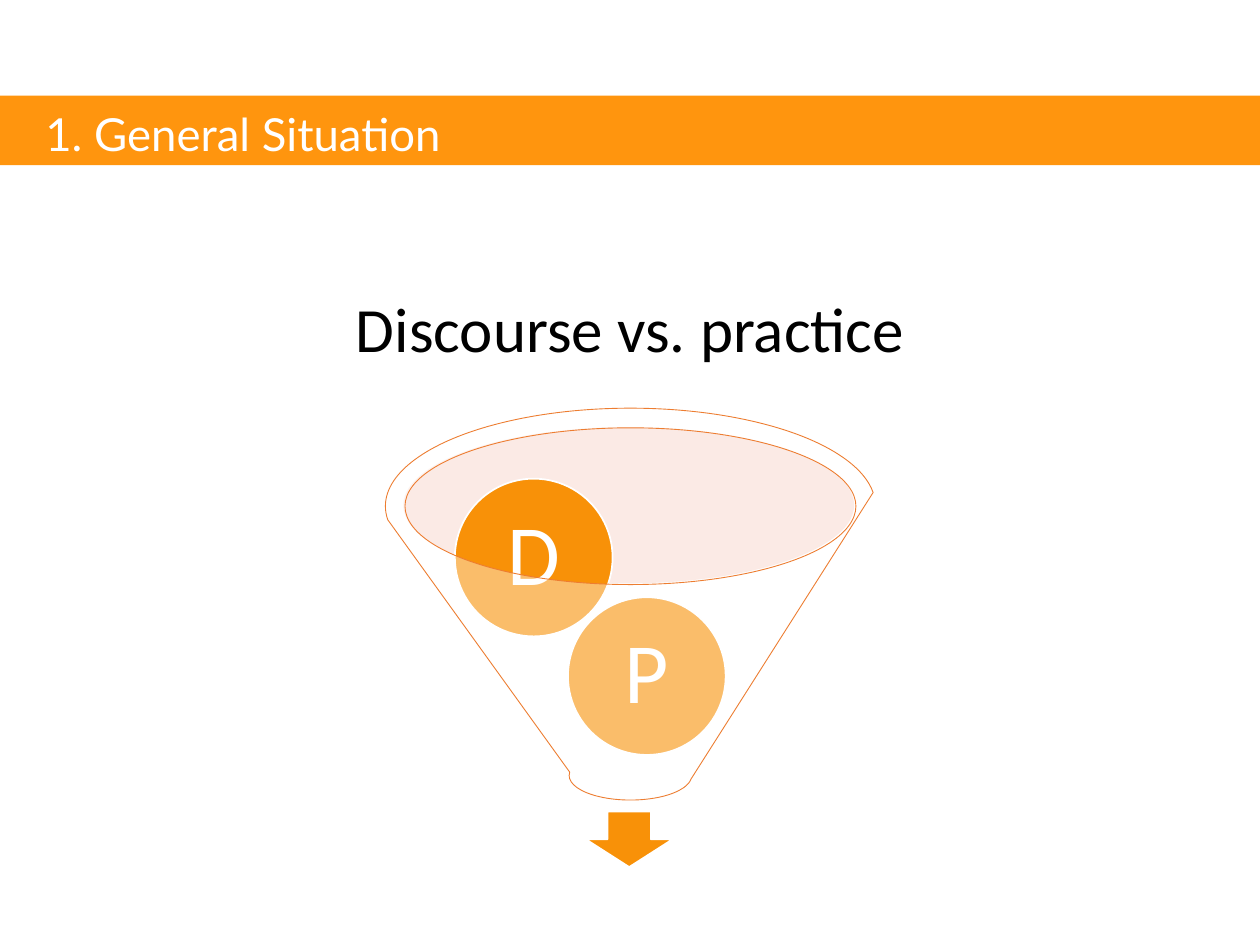
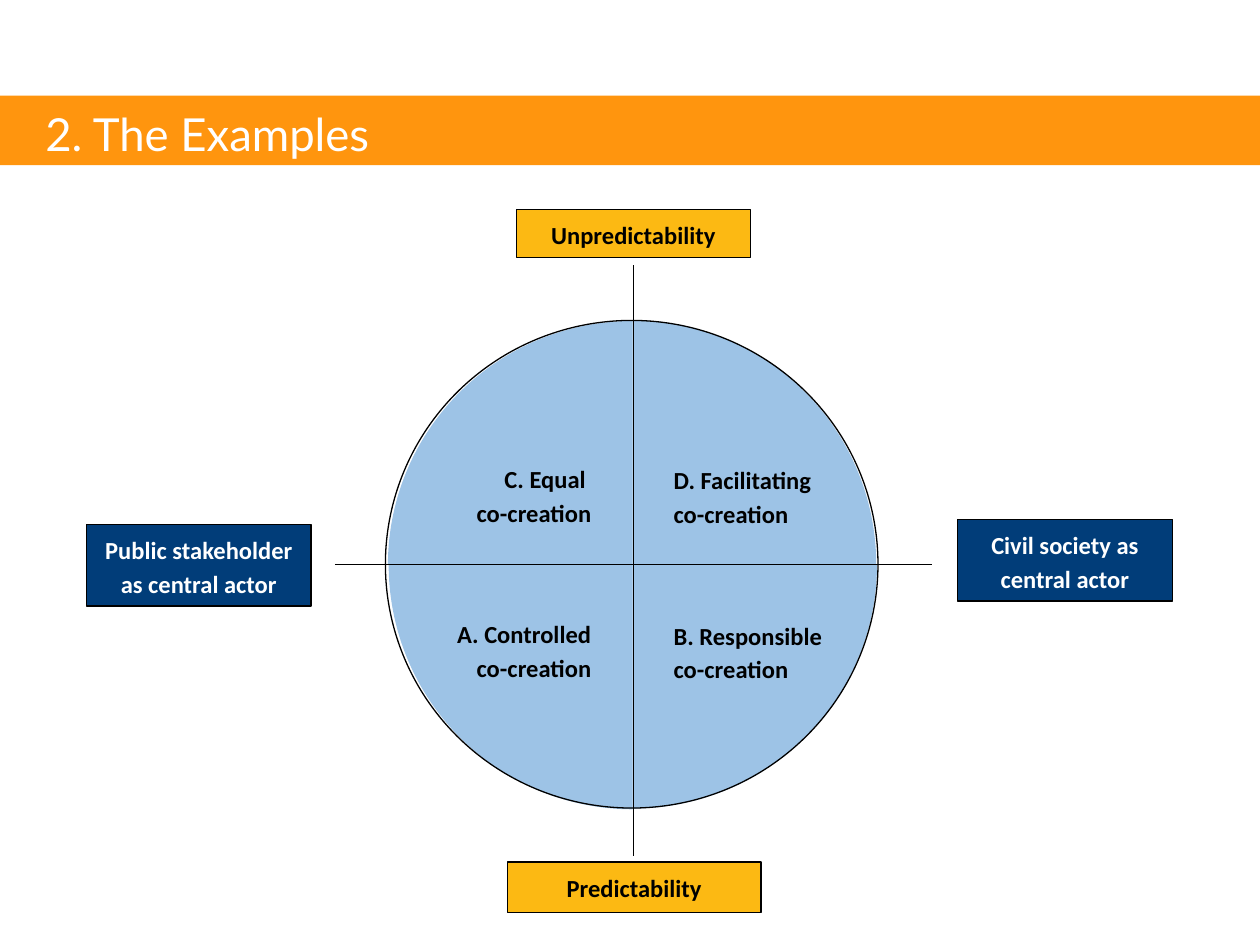
import dataclasses

import lxml.etree
import pptx
import pptx.dml.color
import pptx.enum.shapes
import pptx.enum.text
import pptx.oxml.ns
import pptx.util

Cm = pptx.util.Cm
Pt = pptx.util.Pt
Shape = pptx.enum.shapes.MSO_SHAPE
Align = pptx.enum.text.PP_ALIGN
Anchor = pptx.enum.text.MSO_ANCHOR
qn = pptx.oxml.ns.qn


@dataclasses.dataclass(frozen=True)
class Theme:
    """Colours, fonts and type sizes of the deck."""

    band: str = "FF950E"
    orange: str = "F89108"
    rim: str = "ED7D31"
    mouth: str = "F6CCBE"
    navy: str = "013D79"
    yellow: str = "FCB913"
    sky: str = "9DC3E6"
    white: str = "FFFFFF"
    black: str = "000000"
    title_font: str = "Lato"
    body_font: str = "Calibri"
    title_size: float = 26
    headline_size: float = 36
    ball_size: float = 49
    label_size: float = 14
    hairline: float = 0.75


THEME = Theme()


def rgb(colour):
    """Turn a hex string into a colour."""
    return pptx.dml.color.RGBColor.from_string(colour)


def set_format(target, values):
    """Set each attribute of the target from a dict."""
    for name, value in values.items():
        setattr(target, name, value)


def place(box, left, top, width, height):
    """Return lengths for a part given in centimetres from the box corner."""
    return Cm(box[0] + left), Cm(box[1] + top), Cm(width), Cm(height)


def add_part(slide, kind, bounds, fill=None, line=None, line_width=THEME.hairline, opacity=None):
    """Add a flat preset shape with optional fill, outline and opacity."""
    part = slide.shapes.add_shape(kind, *bounds)
    part.shadow.inherit = False
    if fill:
        part.fill.solid()
        part.fill.fore_color.rgb = rgb(fill)
        if opacity:
            colour = part.element.spPr.find(".//" + qn("a:srgbClr"))
            lxml.etree.SubElement(colour, qn("a:alpha"), val=str(opacity * 1000))
    else:
        part.fill.background()
    if line:
        part.line.color.rgb = rgb(line)
        part.line.width = Pt(line_width)
    else:
        part.line.fill.background()
    return part


def write(frame, lines, size, colour, paragraph_format, frame_format=None, font=THEME.body_font, bold=False):
    """Write one paragraph for each line and format them all alike."""
    set_format(frame, {"word_wrap": True, "vertical_anchor": Anchor.TOP, **(frame_format or {})})
    for index, line in enumerate(lines):
        paragraph = frame.add_paragraph() if index else frame.paragraphs[0]
        paragraph.text = line
        set_format(paragraph, paragraph_format)
        set_format(paragraph.font, {"name": font, "size": Pt(size), "bold": bold})
        paragraph.font.color.rgb = rgb(colour)


def write_label(frame, lines, colour, alignment):
    """Write a bold label of the matrix."""
    write(frame, lines, THEME.label_size, colour, {"alignment": alignment, "line_spacing": 1.15}, bold=True)


def add_axis(slide, box, start, end):
    """Draw a thin line between two points of the box."""
    points = [Cm(corner + offset) for point in (start, end) for corner, offset in zip(box, point)]
    axis = slide.shapes.add_connector(pptx.enum.shapes.MSO_CONNECTOR.STRAIGHT, *points)
    axis.line.color.rgb = rgb(THEME.black)
    axis.line.width = Pt(THEME.hairline)
    lxml.etree.SubElement(axis.element.spPr, qn("a:effectLst"))


def prepare_layout(layout, slide):
    """Put the orange band and the title position on the shared layout."""
    band = add_part(slide, Shape.RECTANGLE, place((0, 0), 0, 1.93, 25.4, 1.4), THEME.band)
    layout.shapes.element.insert(2, band.element)
    for holder in layout.placeholders:
        if holder.placeholder_format.type == pptx.enum.shapes.PP_PLACEHOLDER.TITLE:
            position = place((0, 0), 0.66, 1.98, 23.44, 1.4)
            set_format(holder, dict(zip(("left", "top", "width", "height"), position)))


def write_title(slide, title):
    """Fill the title placeholder."""
    write(slide.shapes.title.text_frame, [title], THEME.title_size, THEME.white,
          {"alignment": Align.LEFT}, {"vertical_anchor": Anchor.MIDDLE}, THEME.title_font)


def add_headline(slide, box, headline):
    """Add the large centred statement."""
    frame = slide.shapes.add_textbox(*place(box, 0, 0, 14.88, 1.8)).text_frame
    write(frame, [headline], THEME.headline_size, THEME.black, {"alignment": Align.CENTER})


def add_funnel(slide, box):
    """Draw the funnel with its two balls and the arrow below."""
    add_part(slide, Shape.OVAL, place(box, 0.36, 0.38, 9.09, 3.15), THEME.mouth, opacity=40)
    add_part(slide, Shape.DOWN_ARROW, place(box, 4.04, 8.13, 1.75, 1.12), THEME.orange, THEME.white, 1)
    margins = {f"margin_{side}": Cm(0.18) for side in ("left", "top", "right", "bottom")}
    for letter, left, top in (("P", 3.68, 3.81), ("D", 1.4, 1.42)):
        ball = add_part(slide, Shape.OVAL, place(box, left, top, 3.18, 3.18), THEME.orange, THEME.white, 1)
        write(ball.text_frame, [letter], THEME.ball_size, THEME.white,
              {"alignment": Align.CENTER, "line_spacing": 0.9},
              {"vertical_anchor": Anchor.MIDDLE, **margins})
    add_part(slide, Shape.FUNNEL, place(box, 0, 0, 9.88, 7.9), THEME.white, THEME.rim, 0.5, 40)


def add_circle(slide, box):
    """Draw the circle of four quarters with its outline."""
    for quarter in range(4):
        pie = add_part(slide, Shape.PIE, place(box, 6.07, 2.25, 9.86, 9.83), THEME.sky)
        pie.adjustments[0], pie.adjustments[1] = 0, 54
        pie.rotation = quarter * 90
    add_part(slide, Shape.OVAL, place(box, 6.02, 2.24, 9.93, 9.83), line=THEME.black)


def add_matrix(slide, box):
    """Draw the circle, its quadrant names, the axes and their end labels."""
    add_circle(slide, box)
    west, east = (6.53, 3.89, Align.RIGHT), (11.58, 4.29, Align.LEFT)
    quadrants = (
        ("C. Equal ", west, 4.93),
        ("A. Controlled", west, 8.05),
        ("B. Responsible", east, 8.08),
        ("D. Facilitating", east, 4.95),
    )
    for name, (left, width, alignment), top in quadrants:
        frame = slide.shapes.add_textbox(*place(box, left, top, width, 1.8)).text_frame
        write_label(frame, [name, "co-creation"], THEME.black, alignment)
    actor, outcome = (THEME.navy, THEME.white), (THEME.yellow, THEME.black)
    ends = (
        ("Civil society as central actor", actor, (17.55, 6.25, 4.34, 1.65)),
        ("Unpredictability", outcome, (8.66, 0, 4.72, 0.97)),
        ("Predictability", outcome, (8.48, 13.16, 5.11, 1.02)),
        ("Public stakeholder as central actor", actor, (0, 6.35, 4.52, 1.65)),
    )
    for name, (fill, colour), bounds in ends:
        label = add_part(slide, Shape.RECTANGLE, place(box, *bounds), fill, THEME.black)
        write_label(label.text_frame, [name], colour, Align.CENTER)
    add_axis(slide, box, (5, 7.16), (17.04, 7.16))
    add_axis(slide, box, (11.02, 13.03), (11.02, 1.12))


def main():
    """Build both slides and save the deck."""
    deck = pptx.Presentation()
    set_format(deck, {"slide_width": Cm(25.4), "slide_height": Cm(19.05)})
    layout = deck.slide_layouts[5]
    situation = deck.slides.add_slide(layout)
    examples = deck.slides.add_slide(layout)
    prepare_layout(layout, situation)
    write_title(situation, "1. General Situation")
    add_headline(situation, (5.26, 5.72), "Discourse vs. practice")
    add_funnel(situation, (7.77, 8.23))
    write_title(examples, "2. The Examples")
    add_matrix(examples, (1.75, 4.22))
    deck.save("out.pptx")


if __name__ == "__main__":
    main()
